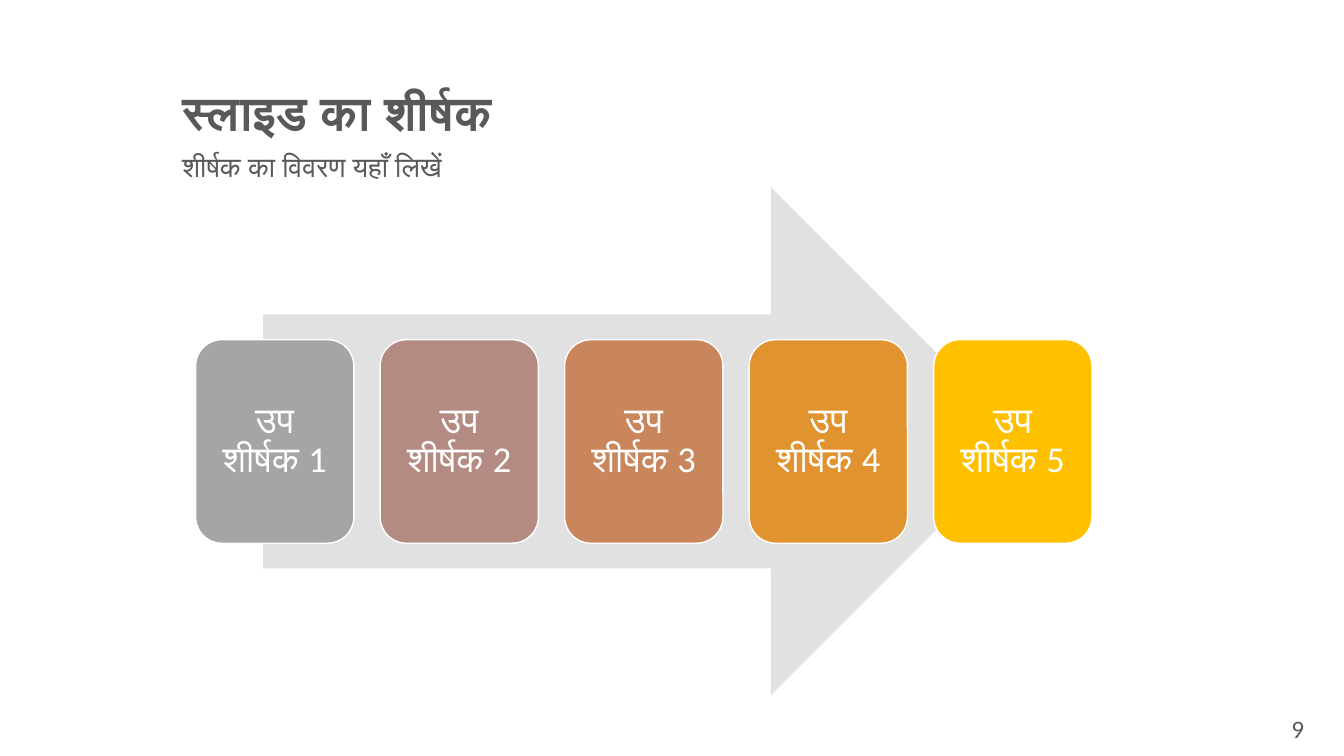
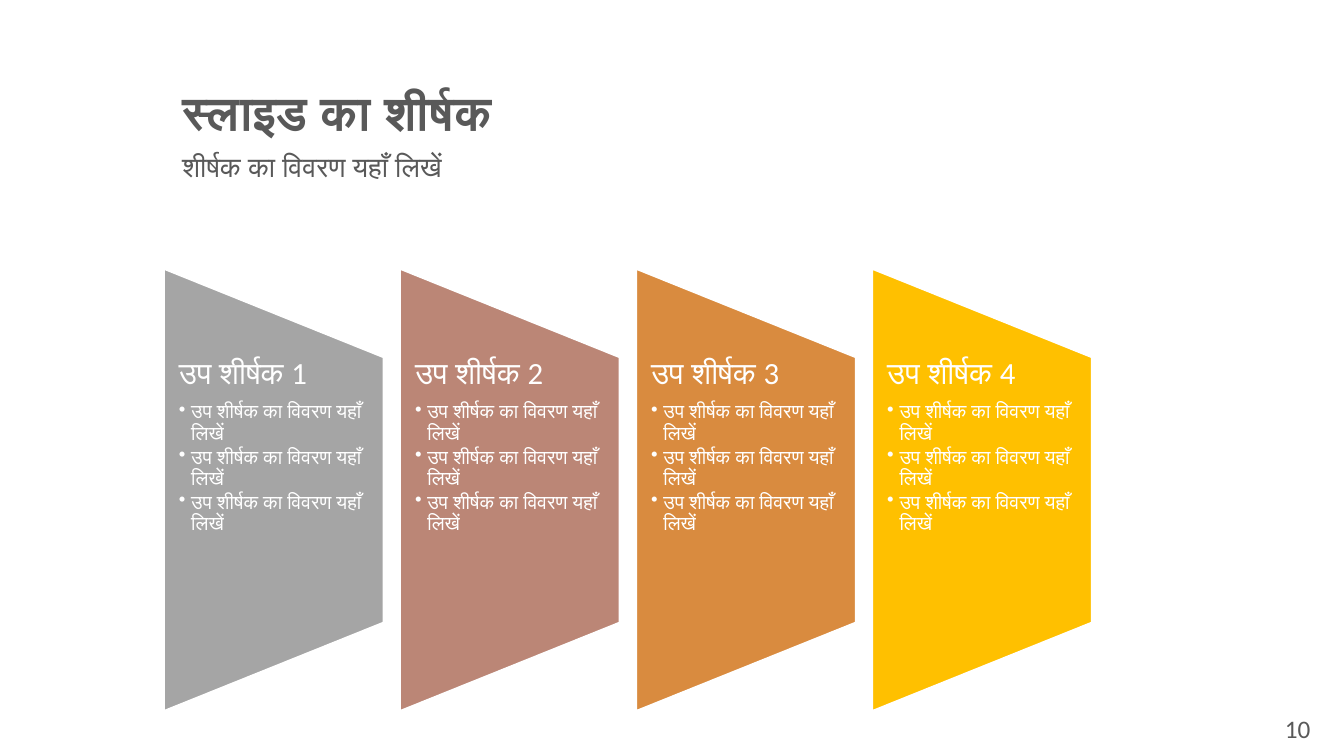
import pptx
import pptx.util
import pptx.dml.color
import pptx.enum.shapes
import pptx.enum.text
from dataclasses import dataclass
from lxml import etree

Cm = pptx.util.Cm
Pt = pptx.util.Pt
SHAPE = pptx.enum.shapes.MSO_SHAPE
ALIGN = pptx.enum.text.PP_ALIGN
ANCHOR = pptx.enum.text.MSO_ANCHOR

TITLE = "स्लाइड का शीर्षक"
SUBTITLE = "शीर्षक का विवरण यहाँ लिखें"
DETAIL = "उप शीर्षक का विवरण यहाँ लिखें"

STEPS = [
    ("उप शीर्षक 1", "A5A5A5"),
    ("उप शीर्षक 2", "B48B83"),
    ("उप शीर्षक 3", "C9855C"),
    ("उप शीर्षक 4", "E19330"),
    ("उप शीर्षक 5", "FFC000"),
]
PANELS = [
    ("उप शीर्षक 1", [DETAIL] * 3, "A5A5A5"),
    ("उप शीर्षक 2", [DETAIL] * 3, "BB8676"),
    ("उप शीर्षक 3", [DETAIL] * 3, "D98B3F"),
    ("उप शीर्षक 4", [DETAIL] * 3, "FFC000"),
]


@dataclass(frozen=True)
class Theme:
    font: str = "Calibri"
    ink: str = "595959"
    light: str = "FFFFFF"
    arrow: str = "E1E1E1"
    title: int = 34
    subtitle: int = 20
    step: int = 26
    heading: int = 22
    detail: int = 14
    number: int = 18
    leading: float = 0.9


THEME = Theme()


def rgb(value):
    return pptx.dml.color.RGBColor.from_string(value)


def style(p, size, color, bold=False, align=ALIGN.LEFT, after=0):
    p.alignment = align
    p.line_spacing = THEME.leading
    p.space_after = Pt(after)
    for r in p.runs:
        r.font.name = THEME.font
        r.font.size = Pt(size)
        r.font.bold = bold
        r.font.color.rgb = rgb(color)


def add_bullet(p, indent):
    pPr = p._p.get_or_add_pPr()
    pPr.set("marL", str(indent))
    pPr.set("indent", str(-indent))
    tag = pPr.tag.replace("pPr", "buChar")
    etree.SubElement(pPr, tag).set("char", "•")


def set_insets(tf, x, y):
    tf.word_wrap = True
    tf.margin_left = tf.margin_right = Cm(x)
    tf.margin_top = tf.margin_bottom = Cm(y)


def add_text(s, box, text, size, **options):
    tf = s.shapes.add_textbox(*map(Cm, box)).text_frame
    tf.word_wrap = True
    tf.text = text
    style(tf.paragraphs[0], size, THEME.ink, **options)


def add_shape(s, kind, box, fill, line_width=0):
    sp = s.shapes.add_shape(kind, *map(Cm, box))
    sp.shadow.inherit = False
    sp.fill.solid()
    sp.fill.fore_color.rgb = rgb(fill)
    if line_width:
        sp.line.color.rgb = rgb(THEME.light)
        sp.line.width = Pt(line_width)
    else:
        sp.line.fill.background()
    return sp


def add_base_slide(prs, number):
    """Add a slide with the shared title, subtitle and page number."""
    s = prs.slides.add_slide(prs.slide_layouts[6])
    add_text(s, (4.34, 2.13, 24.41, 1.4), TITLE, THEME.title, bold=True)
    add_text(s, (4.34, 3.73, 24.41, 1.6), SUBTITLE, THEME.subtitle)
    add_text(s, (31.54, 17.93, 2.33, 1.12), str(number), THEME.number,
             align=ALIGN.CENTER)
    return s


def build_steps(s):
    left, top, width, height, gap = 4.93, 8.56, 3.99, 5.13, 0.66
    add_shape(s, SHAPE.RIGHT_ARROW, (6.63, 4.72, 19.2, 12.8), THEME.arrow)
    for i, (label, fill) in enumerate(STEPS):
        box = (left + i * (width + gap), top, width, height)
        sp = add_shape(s, SHAPE.ROUNDED_RECTANGLE, box, fill, 1)
        tf = sp.text_frame
        set_insets(tf, 0.28, 0.28)
        tf.vertical_anchor = ANCHOR.MIDDLE
        tf.text = label
        style(tf.paragraphs[0], THEME.step, THEME.light, align=ALIGN.CENTER)


def build_panels(s):
    left, top, width, height, gap = 4.13, 6.77, 5.54, 11.15, 0.41
    text_top, text_height = 9.02, 6.68
    for i, (heading, details, fill) in enumerate(PANELS):
        x = left + i * (width + gap)
        # A quarter turn swaps the sides, so the box is laid about the centre.
        turn = (height - width) / 2
        sp = add_shape(s, SHAPE.FLOWCHART_MANUAL_OPERATION,
                       (x - turn, top + turn, height, width), fill, 1.5)
        sp.rotation = 270

        box = (x, text_top, width, text_height)
        tf = s.shapes.add_textbox(*map(Cm, box)).text_frame
        set_insets(tf, 0.38, 0)
        tf.text = heading
        style(tf.paragraphs[0], THEME.heading, THEME.light, after=7.7)
        for detail in details:
            p = tf.add_paragraph()
            p.text = detail
            p.level = 1
            style(p, THEME.detail, THEME.light, after=2.1)
            add_bullet(p, Cm(0.31))


def main():
    prs = pptx.Presentation()
    prs.slide_width, prs.slide_height = Cm(33.87), Cm(19.05)
    for number, build in enumerate((build_steps, build_panels), start=9):
        build(add_base_slide(prs, number))
    prs.save("out.pptx")


if __name__ == "__main__":
    main()
